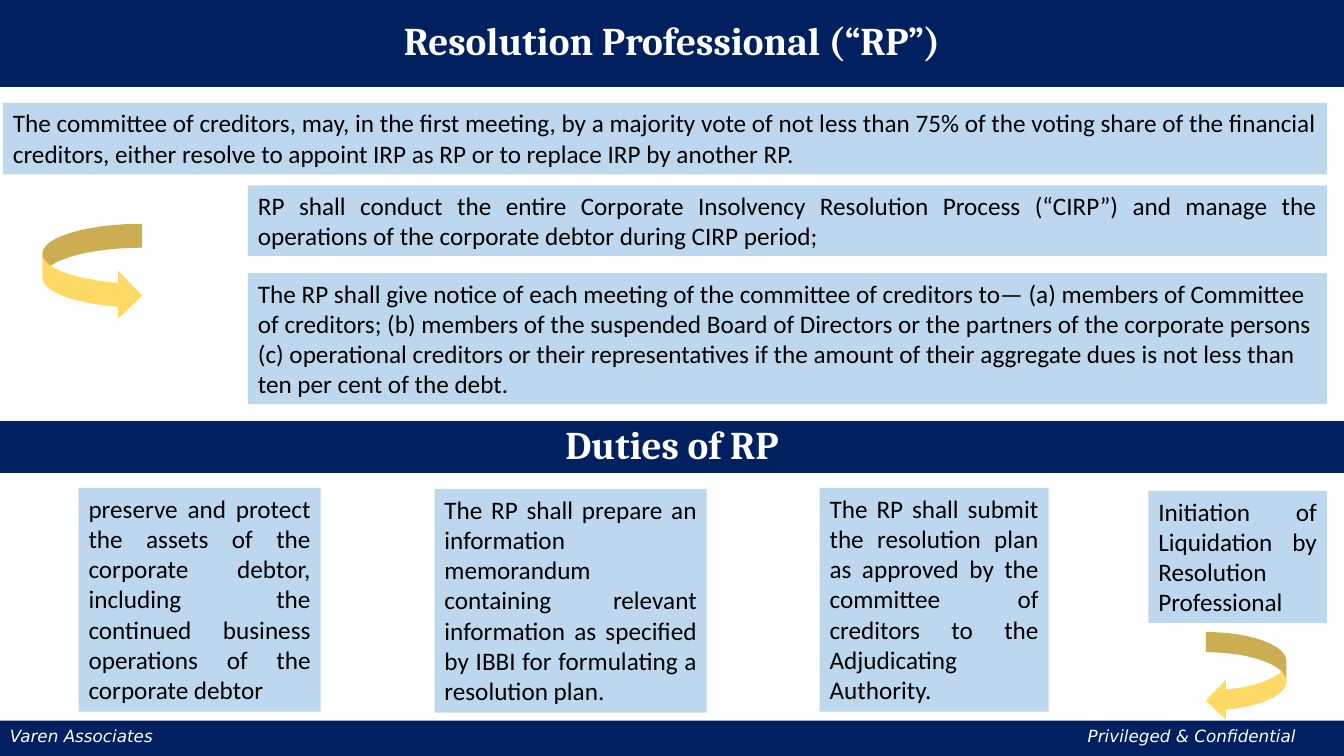
from lxml.etree import SubElement
from pptx import Presentation
from pptx.dml.color import RGBColor
from pptx.enum.shapes import MSO_SHAPE
from pptx.enum.text import MSO_ANCHOR, PP_ALIGN
from pptx.oxml.ns import qn
from pptx.util import Inches, Pt

NAVY, PALE_BLUE, GOLD = "002060", "BDD7EE", "FFD966"
WHITE, BLACK = "FFFFFF", "000000"


def add_filled(kind, area, fill, outline=None):
    shape = page.shapes.add_shape(kind, *[Inches(length) for length in area])
    shape.shadow.inherit = False
    shape.fill.solid()
    shape.fill.fore_color.rgb = RGBColor.from_string(fill)
    if outline:
        shape.line.color.rgb = RGBColor.from_string(outline)
        shape.line.width = Pt(1)
    else:
        shape.line.fill.background()
    return shape


def write(box, text, font, size, color, align, anchor=MSO_ANCHOR.TOP):
    """Fill the box with one paragraph and return it with its run."""
    box.text_frame.word_wrap = True
    box.text_frame.vertical_anchor = anchor
    para = box.text_frame.paragraphs[0]
    para.alignment = align
    span = para.add_run()
    span.text = text
    span.font.name = font
    span.font.size = Pt(size)
    span.font.color.rgb = RGBColor.from_string(color)
    return para, span


deck = Presentation()
deck.slide_width = Inches(13.33)
deck.slide_height = Inches(7.5)
page = deck.slides.add_slide(deck.slide_layouts[6])

# Heading bands
for text, top, height in [
    ("Resolution Professional (“RP”)", -0.03, 0.9),
    ("Duties of RP", 4.17, 0.53),
]:
    band = add_filled(MSO_SHAPE.RECTANGLE, (-0.01, top, 13.35, height), NAVY, WHITE)
    para, span = write(band, text, "Cambria", 28, WHITE, PP_ALIGN.CENTER, MSO_ANCHOR.MIDDLE)
    para.line_spacing = 0.9
    span.font.bold = True

# Footer, with a tab stop for the right-hand note
footer = add_filled(MSO_SHAPE.RECTANGLE, (0, 7.15, 13.33, 0.35), NAVY)
para, span = write(footer, "Varen Associates\tPrivileged & Confidential",
                   "DejaVu Sans", 12, WHITE, PP_ALIGN.LEFT)
span.font.italic = True
tabs = SubElement(para._p.get_or_add_pPr(), qn("a:tabLst"))
SubElement(tabs, qn("a:tab"), pos=str(Inches(10.69)), algn="l")

# Appointment, conduct and notice, then the four duties
statements = [
    ((0.03, 1.02, 13.13, 0.71), PP_ALIGN.JUSTIFY,
     "The committee of creditors, may, in the first meeting, by a majority vote of not less "
     "than 75% of the voting share of the financial creditors, either resolve to appoint IRP "
     "as RP or to replace IRP by another RP."),
    ((2.46, 1.84, 10.7, 0.7), PP_ALIGN.JUSTIFY,
     "RP shall conduct the entire Corporate Insolvency Resolution Process (“CIRP”) and manage "
     "the operations of the corporate debtor during CIRP period;"),
    ((2.46, 2.71, 10.7, 1.3), PP_ALIGN.LEFT,
     "The RP shall give notice of each meeting of the committee of creditors to— (a) members "
     "of Committee of creditors; (b) members of the suspended Board of Directors or the "
     "partners of the corporate persons (c) operational creditors or their representatives if "
     "the amount of their aggregate dues is not less than ten per cent of the debt."),
    ((0.78, 4.84, 2.4, 2.22), PP_ALIGN.JUSTIFY,
     "preserve and protect the assets of the corporate debtor, including the continued "
     "business operations of the corporate debtor"),
    ((4.31, 4.85, 2.7, 2.22), PP_ALIGN.JUSTIFY,
     "The RP shall prepare an information memorandum containing relevant information as "
     "specified by IBBI for formulating a resolution plan."),
    ((8.13, 4.84, 2.27, 2.22), PP_ALIGN.JUSTIFY,
     "The RP shall submit the resolution plan as approved by the committee of creditors to "
     "the Adjudicating Authority."),
    ((11.39, 4.87, 1.77, 1.31), PP_ALIGN.JUSTIFY,
     "Initiation of Liquidation by Resolution Professional"),
]
for area, align, text in statements:
    box = add_filled(MSO_SHAPE.RECTANGLE, area, PALE_BLUE)
    write(box, text, "Calibri", 18, BLACK, align)

# Curved arrows
add_filled(MSO_SHAPE.CURVED_RIGHT_ARROW, (0.42, 2.22, 0.99, 0.95), GOLD)
add_filled(MSO_SHAPE.CURVED_LEFT_ARROW, (11.96, 6.27, 0.8, 0.88), GOLD)

deck.save("out.pptx")
